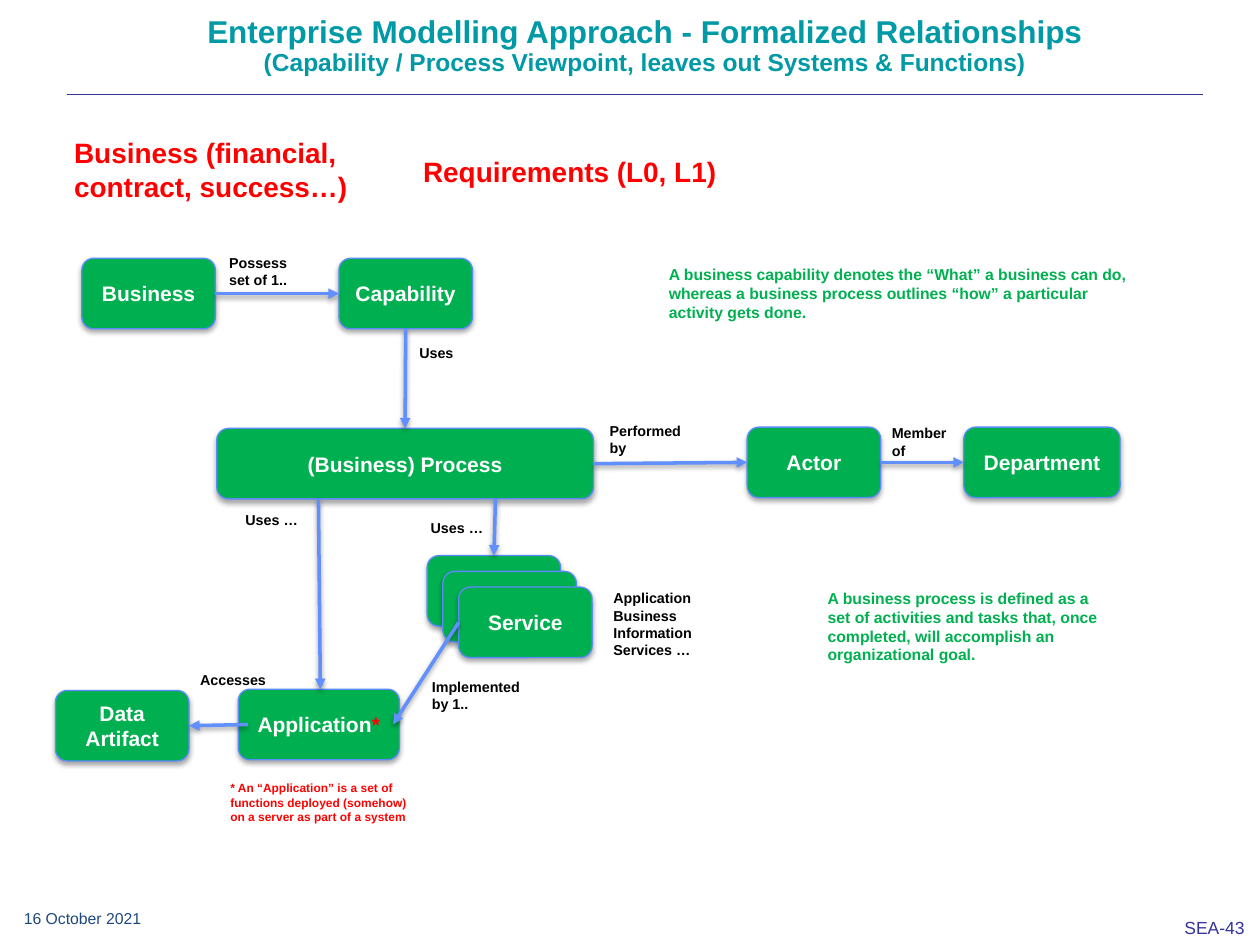
from dataclasses import dataclass

from lxml import etree
from pptx import Presentation
from pptx import util as u
from pptx.dml.color import RGBColor
from pptx.enum import shapes, text
from pptx.oxml.ns import qn


@dataclass(frozen=True)
class Theme:
    font: str = "Arial"
    title: str = "0099A6"
    rule: str = "333399"
    box: str = "00B050"
    edge: str = "5B8AFB"
    arrow: str = "618FFD"
    light: str = "FFFFFF"
    dark: str = "000000"
    alert: str = "FF0000"
    date: str = "1F497D"
    title_size: float = 18
    subtitle_size: float = 14
    heading_size: float = 16
    box_size: float = 12
    footer_size: float = 10
    note_size: float = 9
    label_size: float = 8.2
    foot_size: float = 6.8


T = Theme()
# The slide is a grid of 100 columns by 75 rows
WIDTH, HEIGHT = u.Inches(10), u.Inches(7.5)
COLS, ROWS = 100, 75
BOX_W, BOX_H = 10.6, 5.6

# name: text, column, row, width (back to front)
BOXES = {
    "business": ("Business", 6.5, 20.5, BOX_W),
    "capability": ("Capability", 26.9, 20.5, BOX_W),
    "process": ("(Business) Process", 17.2, 34, 29.9),
    "actor": ("Actor", 59.3, 33.9, BOX_W),
    "department": ("Department", 76.5, 33.9, 12.4),
    "card 1": ("", 33.9, 44.1, BOX_W),
    "card 2": ("", 35.15, 45.35, BOX_W),
    "service": ("Service", 36.4, 46.6, BOX_W),
    "application": ("Application", 18.9, 54.7, 12.8),
    "data": ("Data Artifact", 4.4, 54.8, BOX_W),
}

# start box, share of its size; end box, share of its size
ARROWS = [
    ("business", (1, .5), "capability", (0, .5)),
    ("capability", (.5, 1), "process", (.5, 0)),
    ("process", (1, .5), "actor", (0, .5)),
    ("actor", (1, .5), "department", (0, .5)),
    ("process", (.27, 1), "application", (.51, 0)),
    ("process", (.74, 1), "card 1", (.5, 0)),
    ("service", (0, .5), "application", (.96, .5)),
    ("application", (.06, .5), "data", (1, .5)),
]

# text, column, row, width, height
LABELS = [
    ("Possess set of 1..", 17.2, 19.7, 7.5, 3.8),
    ("Uses", 32.3, 26.8, 8.4, 2.4),
    ("Performed\nby", 47.4, 33, 9.1, 3.8),
    ("Member\nof", 69.8, 33.2, 9.1, 3.8),
    ("Uses …", 18.5, 40.1, 8.4, 2.4),
    ("Uses …", 33.2, 40.7, 7.5, 2.4),
    ("Application\nBusiness\nInformation\nServices …", 47.7, 46.3, 8.3, 6.6),
    ("Implemented by 1..", 33.3, 53.3, 9.3, 3.8),
    ("Accesses", 14.9, 52.8, 8.4, 2.4),
]
NOTES = [
    ("A business capability denotes the “What” a business can do, whereas a "
     "business process outlines “how” a particular activity gets done.",
     47.1, 20.5, 43.8, 5.6),
    ("A business process is defined as a set of activities and tasks that, once "
     "completed, will accomplish an organizational goal.",
     59.7, 46.2, 29.2, 7.1),
]
HEADINGS = [
    ("Business (financial, contract, success…)", 4.9, 10.3, 27.3, 6.4),
    ("Requirements (L0, L1)", 32.6, 11.8, 27.3, 3.7),
]


def col(n):
    return round(WIDTH * n / COLS)


def row(n):
    return round(HEIGHT * n / ROWS)


def area(x, y, w, h):
    return col(x), row(y), col(w), row(h)


def put(obj, **values):
    for name, value in values.items():
        setattr(obj, name, value)


def add_run(p, words, size, color, bold=True):
    r = p.add_run()
    r.text = words
    put(r.font, name=T.font, size=u.Pt(size), bold=bold)
    r.font.color.rgb = RGBColor.from_string(color)


def set_effect(sp, alpha=None, dist=0):
    """Give a shape a soft shadow straight below it, or none at all."""
    effects = etree.SubElement(sp._element.spPr, qn("a:effectLst"))
    if alpha:
        shadow = etree.SubElement(
            effects, qn("a:outerShdw"), blurRad=str(u.Pt(3.1)),
            dist=str(u.Pt(dist)), dir="5400000", rotWithShape="0")
        clr = etree.SubElement(shadow, qn("a:srgbClr"), val=T.dark)
        etree.SubElement(clr, qn("a:alpha"), val=str(alpha * 1000))


def add_text(s, words, x, y, w, h, size, color, bold=True, indent=0, **frame):
    tf = s.shapes.add_textbox(*area(x, y, w, h)).text_frame
    put(tf, **{"word_wrap": True, **frame})
    for i, line in enumerate(words.split("\n")):
        p = tf.add_paragraph() if i else tf.paragraphs[0]
        if indent:
            p.level = 1
            pPr = p._p.get_or_add_pPr()
            pPr.set("marL", str(col(indent)))
            pPr.set("indent", "0")
        add_run(p, line, size, color, bold)


def add_box(s, words, x, y, w):
    sp = s.shapes.add_shape(shapes.MSO_SHAPE.ROUNDED_RECTANGLE,
                            *area(x, y, w, BOX_H))
    sp.fill.solid()
    sp.fill.fore_color.rgb = RGBColor.from_string(T.box)
    sp.line.color.rgb = RGBColor.from_string(T.edge)
    sp.line.width = u.Pt(0.75)
    set_effect(sp, alpha=35, dist=1.8)
    if words:
        tf = sp.text_frame
        put(tf, word_wrap=True, vertical_anchor=text.MSO_ANCHOR.MIDDLE)
        p = tf.paragraphs[0]
        p.alignment = text.PP_ALIGN.CENTER
        add_run(p, words, T.box_size, T.light)
    return sp


def add_line(s, start, end, color, width):
    line = s.shapes.add_connector(shapes.MSO_CONNECTOR.STRAIGHT, *start, *end)
    line.line.color.rgb = RGBColor.from_string(color)
    line.line.width = u.Pt(width)
    return line


def port(sp, share):
    return (round(sp.left + sp.width * share[0]),
            round(sp.top + sp.height * share[1]))


def add_arrow(s, start, end):
    line = add_line(s, start, end, T.arrow, 2)
    etree.SubElement(line.line._get_or_add_ln(), qn("a:tailEnd"), type="triangle")
    set_effect(line, alpha=38, dist=1.6)


def add_title(s):
    sp = s.shapes.title
    sp.left, sp.top, sp.width, sp.height = area(6.2, 0.8, 90, 8)
    tf = sp.text_frame
    put(tf, word_wrap=True, auto_size=text.MSO_AUTO_SIZE.NONE,
        vertical_anchor=text.MSO_ANCHOR.TOP)
    p = tf.paragraphs[0]
    put(p, alignment=text.PP_ALIGN.CENTER, line_spacing=0.9, space_before=u.Pt(0))
    add_run(p, "Enterprise Modelling Approach - Formalized Relationships",
            T.title_size, T.title)
    p.add_line_break()
    add_run(p, "(Capability / Process Viewpoint, leaves out Systems & Functions)",
            T.subtitle_size, T.title)


def main():
    prs = Presentation()
    put(prs, slide_width=WIDTH, slide_height=HEIGHT)
    s = prs.slides.add_slide(prs.slide_layouts[5])

    # Title and rule
    add_title(s)
    rule = add_line(s, (col(5.3), row(7.5)), (col(95.5), row(7.5)), T.rule, 0.13)
    set_effect(rule)

    # Diagram
    boxes = {name: add_box(s, *values) for name, values in BOXES.items()}
    add_run(boxes["application"].text_frame.paragraphs[0], "*", T.box_size, T.alert)
    for a, a_share, b, b_share in ARROWS:
        add_arrow(s, port(boxes[a], a_share), port(boxes[b], b_share))
    for label in LABELS:
        add_text(s, *label, T.label_size, T.dark)

    # Headings and notes
    for heading in HEADINGS:
        add_text(s, *heading, T.heading_size, T.alert)
    for note in NOTES:
        add_text(s, *note, T.note_size, T.box, indent=5)
    add_text(s, "* An “Application” is a set of functions deployed (somehow) on a "
             "server as part of a system", 17.3, 61.5, 17.3, 4.4, T.foot_size, T.alert)

    # Footer
    add_text(s, "16 October 2021", 0.9, 71.5, 11.5, 2.8, T.footer_size - 1, T.date,
             bold=False, vertical_anchor=text.MSO_ANCHOR.MIDDLE)
    add_text(s, "SEA-43", 93.1, 72.4, 6.8, 2.6, T.footer_size, T.rule, bold=False,
             word_wrap=False, margin_left=col(0.9), margin_right=col(0.9),
             margin_top=row(0.4), margin_bottom=row(0.4))
    prs.save("out.pptx")


if __name__ == "__main__":
    main()
